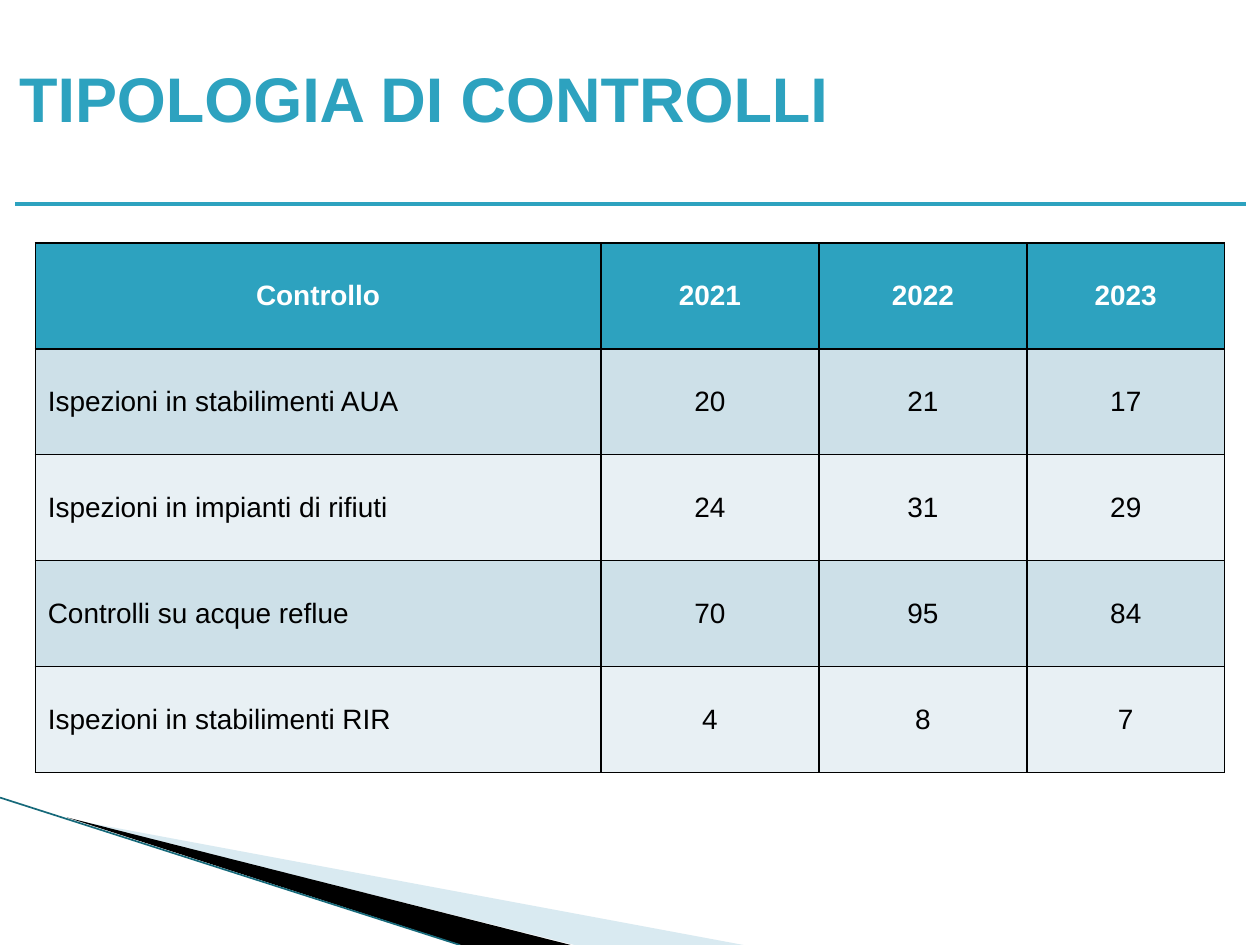
import pptx
import pptx.util
import pptx.dml.color
import pptx.enum.shapes
import pptx.enum.text
import pptx.oxml
import pptx.oxml.ns

COLORS = {"accent": "2DA2BF", "band_dark": "CDE0E8", "band_light": "E8F0F4",
          "wedge": "A0CBDC", "edge": "16697A", "black": "000000", "white": "FFFFFF"}
PP_ALIGN = pptx.enum.text.PP_ALIGN
ANCHOR = pptx.enum.text.MSO_ANCHOR
NS = pptx.oxml.ns.nsdecls("a")

prs = pptx.Presentation()
prs.slide_width, prs.slide_height = pptx.util.Inches(10), pptx.util.Inches(7.5)
s = prs.slides.add_slide(prs.slide_layouts[5])


def at(x, y):
    """Turn percentages of the slide's width and height into lengths."""
    return round(prs.slide_width * x / 100), round(prs.slide_height * y / 100)


def style(font, color, **values):
    """Set the font values and colour of a run."""
    for name, value in {"name": "Arial", **values}.items():
        setattr(font, name, value)
    font.color.rgb = pptx.dml.color.RGBColor.from_string(COLORS[color])


# Corner wedges
wedges = [
    ("wedge", 40, [(5.5, 86.7), (59, 100), (45.6, 100)]),
    ("black", 100, [(5.3, 86.5), (45.3, 100), (36.6, 100)]),
]
for color, opacity, points in wedges:
    corners = [at(*point) for point in points]
    fb = s.shapes.build_freeform(*corners[0])
    fb.add_line_segments(corners[1:], close=True)
    sp = fb.convert_to_shape()
    sp.shadow.inherit = False
    sp.line.fill.background()
    sp.fill.solid()
    sp.fill.fore_color.rgb = pptx.dml.color.RGBColor.from_string(COLORS[color])
    if opacity < 100:
        clr = sp.fill._xPr.find(".//" + pptx.oxml.ns.qn("a:srgbClr"))
        clr.append(pptx.oxml.parse_xml(f'<a:alpha {NS} val="{opacity * 1000}"/>'))

# Wedge edge and title rule
rules = [("edge", 0.95, (0, 84.4), (36.5, 100)),
         ("accent", 2, (1.2, 21.6), (98.9, 21.6))]
for color, width, start, end in rules:
    cx = s.shapes.add_connector(pptx.enum.shapes.MSO_CONNECTOR.STRAIGHT,
                                *at(*start), *at(*end))
    cx.line.width = pptx.util.Pt(width)
    cx.line.color.rgb = pptx.dml.color.RGBColor.from_string(COLORS[color])
    cx._element.spPr.append(pptx.oxml.parse_xml(f"<a:effectLst {NS}/>"))

# Table of controls by year
rows = [
    ("Controllo", "2021", "2022", "2023"),
    ("Ispezioni in stabilimenti AUA", "20", "21", "17"),
    ("Ispezioni in impianti di rifiuti", "24", "31", "29"),
    ("Controlli su acque reflue", "70", "95", "84"),
    ("Ispezioni in stabilimenti RIR", "4", "8", "7"),
]
col_shares = [44.9, 17.3, 16.5, 15.7]
row_share = 11.21
tbl = s.shapes.add_table(len(rows), len(col_shares), *at(2.8, 25.7),
                         *at(sum(col_shares), row_share * len(rows))).table
for col, share in zip(tbl.columns, col_shares):
    col.width = at(share, 0)[0]
for i, row in enumerate(rows):
    tbl.rows[i].height = at(0, row_share)[1]
    fill = "accent" if i == 0 else "band_dark" if i % 2 else "band_light"
    for j, text in enumerate(row):
        cell = tbl.cell(i, j)
        cell.vertical_anchor = ANCHOR.MIDDLE
        p = cell.text_frame.paragraphs[0]
        p.alignment = PP_ALIGN.LEFT if i and j == 0 else PP_ALIGN.CENTER
        r = p.add_run()
        r.text = text
        style(r.font, "black" if i else "white", size=pptx.util.Pt(16), bold=i == 0)
        tcPr = cell._tc.get_or_add_tcPr()
        for side in ("lnL", "lnR", "lnT", "lnB"):
            tcPr.append(pptx.oxml.parse_xml(
                f'<a:{side} {NS} w="12700"><a:solidFill>'
                f'<a:srgbClr val="{COLORS["black"]}"/></a:solidFill></a:{side}>'))
        cell.fill.solid()
        cell.fill.fore_color.rgb = pptx.dml.color.RGBColor.from_string(COLORS[fill])

# Title
title = s.shapes.title
title.left, title.top = at(0, 4.8)
title.width, title.height = at(67.3, 15.9)
tf = title.text_frame
for name, value in {"word_wrap": True, "vertical_anchor": ANCHOR.TOP,
                    "auto_size": pptx.enum.text.MSO_AUTO_SIZE.NONE,
                    "margin_top": pptx.util.Inches(0.11)}.items():
    setattr(tf, name, value)
p = tf.paragraphs[0]
p.alignment = PP_ALIGN.CENTER
r = p.add_run()
r.text = "TIPOLOGIA DI CONTROLLI"
style(r.font, "accent", size=pptx.util.Pt(36), bold=True)

prs.save("out.pptx")
